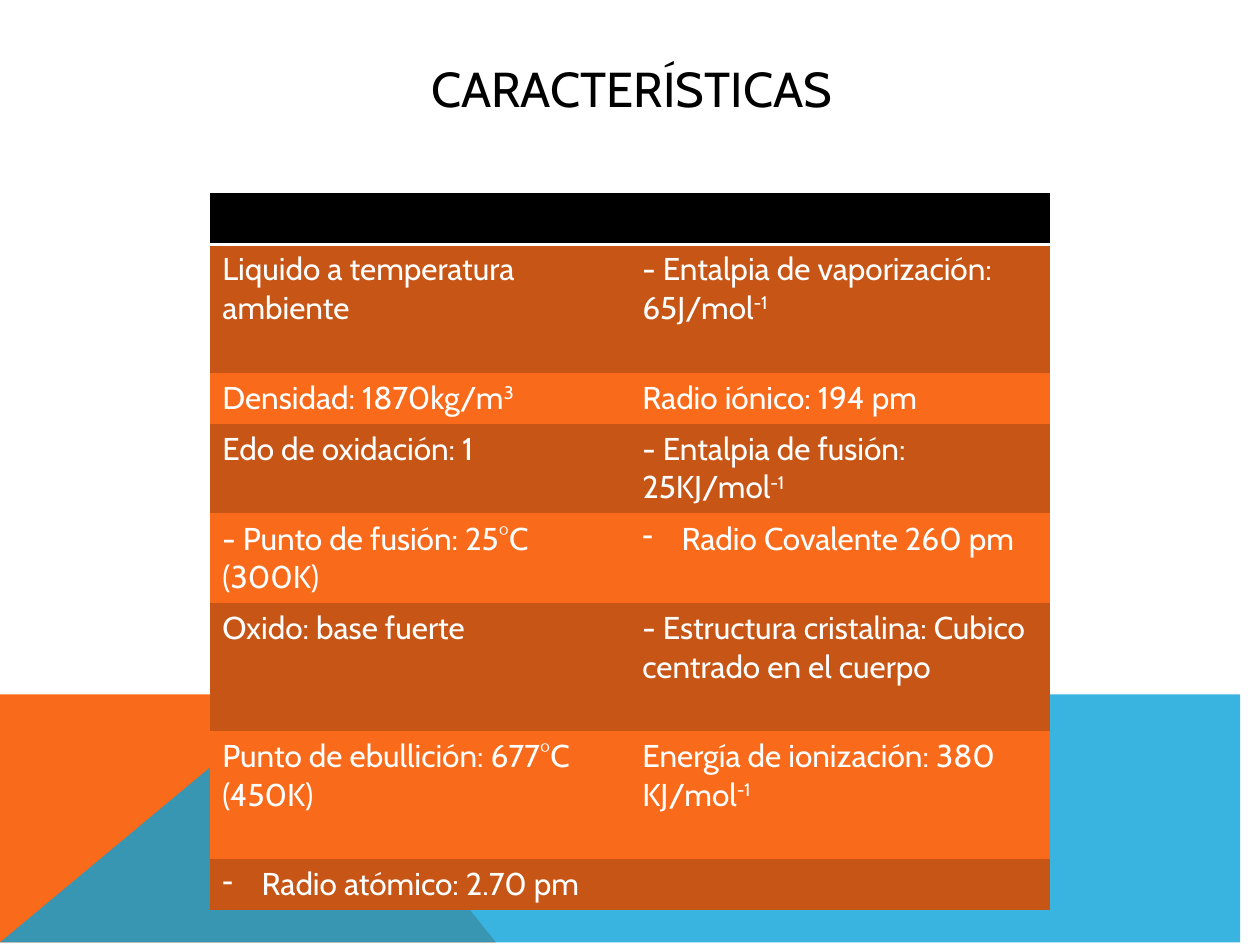
from lxml.etree import SubElement
from pptx import Presentation
from pptx.dml.color import RGBColor
from pptx.enum.text import MSO_ANCHOR, PP_ALIGN
from pptx.oxml import parse_xml
from pptx.oxml.ns import nsdecls, qn
from pptx.util import Cm, Pt

FONT = "Cabin"
COLORS = {"black": "000000", "white": "FFFFFF", "orange": "F96A1B",
          "rust": "C75516", "blue": "08A1D9"}
TITLE = "CARACTERÍSTICAS"
BULLET = "• "
ROWS = [
    (1.03, "", ""),
    (2.59, "Liquido a temperatura ambiente", "- Entalpia de vaporización: 65J/mol^-1"),
    (1.03, "Densidad: 1870kg/m^3", "Radio iónico: 194 pm"),
    (1.81, "Edo de oxidación: 1", "- Entalpia de fusión: 25KJ/mol^-1"),
    (1.81, "- Punto de fusión: 25°C (300K)", BULLET + "Radio Covalente 260 pm"),
    (2.58, "Oxido: base fuerte", "- Estructura cristalina: Cubico centrado en el cuerpo"),
    (2.58, "Punto de ebullición: 677°C (450K)", "Energía de ionización: 380 KJ/mol^-1"),
    (1.03, BULLET + "Radio atómico: 2.70 pm", ""),
]
BANDS = [
    ("orange", 100, [(0, 19.05), (0, 14.02), (5.66, 14.02), (9.93, 19.05)]),
    ("blue", 80, [(0, 19.05), (5.66, 14.02), (25.4, 14.04), (25.4, 19.05)]),
]
NO_STYLE = "{2D5ABB26-0587-4C30-8999-92F81FD0307C}"


def rgb(name):
    return RGBColor.from_string(COLORS[name])


def set_font(p, size, color):
    p.font.name = FONT
    p.font.size = Pt(size)
    p.font.color.rgb = rgb(color)


def add_band(s, color, alpha, points):
    builder = s.shapes.build_freeform(*points[0], scale=Cm(1))
    builder.add_line_segments(points[1:], close=True)
    sp = builder.convert_to_shape()
    sp.shadow.inherit = False
    sp.line.fill.background()
    sp.fill.solid()
    sp.fill.fore_color.rgb = rgb(color)
    if alpha < 100:
        clr = sp.fill._xPr.find(".//" + qn("a:srgbClr"))
        SubElement(clr, qn("a:alpha"), val=str(alpha * 1000))


def add_dash(p):
    pPr = p._p.get_or_add_pPr()
    pPr.set("marL", str(Cm(0.79)))
    pPr.set("indent", str(-Cm(0.79)))
    pPr.insert(0, parse_xml(f'<a:buChar {nsdecls("a")} char="-"/>'))


def fill_cell(cell, text, color):
    cell.fill.solid()
    cell.fill.fore_color.rgb = rgb(color)
    p = cell.text_frame.paragraphs[0]
    if text.startswith(BULLET):
        add_dash(p)
    base, _, power = text.removeprefix(BULLET).partition("^")
    if base:
        p.add_run().text = base
    if power:
        r = p.add_run()
        r.text = power
        r._r.get_or_add_rPr().set("baseline", "30000")
    set_font(p, 18, "white")


def add_bottom_border(cell):
    cell._tc.get_or_add_tcPr().insert(0, parse_xml(
        f'<a:lnB {nsdecls("a")} w="{Pt(2)}"><a:solidFill>'
        f'<a:srgbClr val="{COLORS["white"]}"/></a:solidFill></a:lnB>'))


def add_properties(s):
    height = sum(row[0] for row in ROWS)
    frame = s.shapes.add_table(len(ROWS), 2, Cm(4.23), Cm(3.89), Cm(16.93), Cm(height))
    table = frame.table
    table._tbl.tblPr.find(qn("a:tableStyleId")).text = NO_STYLE
    for i, (row_height, *texts) in enumerate(ROWS):
        table.rows[i].height = Cm(row_height)
        color = "black" if i == 0 else ("orange", "rust")[i % 2]
        for cell, text in zip(table.rows[i].cells, texts):
            fill_cell(cell, text, color)
            if i == 0:
                add_bottom_border(cell)


def main():
    prs = Presentation()
    prs.slide_width, prs.slide_height = Cm(25.4), Cm(19.05)
    s = prs.slides.add_slide(prs.slide_layouts[5])
    for band in BANDS:
        add_band(s, *band)

    title = s.shapes.title
    title.left, title.top, title.width, title.height = Cm(2.29), Cm(1.02), Cm(20.88), Cm(1.52)
    tf = title.text_frame
    tf.text = TITLE
    tf.vertical_anchor = MSO_ANCHOR.MIDDLE
    p = tf.paragraphs[0]
    p.alignment = PP_ALIGN.CENTER
    set_font(p, 28, "black")

    add_properties(s)
    prs.save("out.pptx")


if __name__ == "__main__":
    main()
